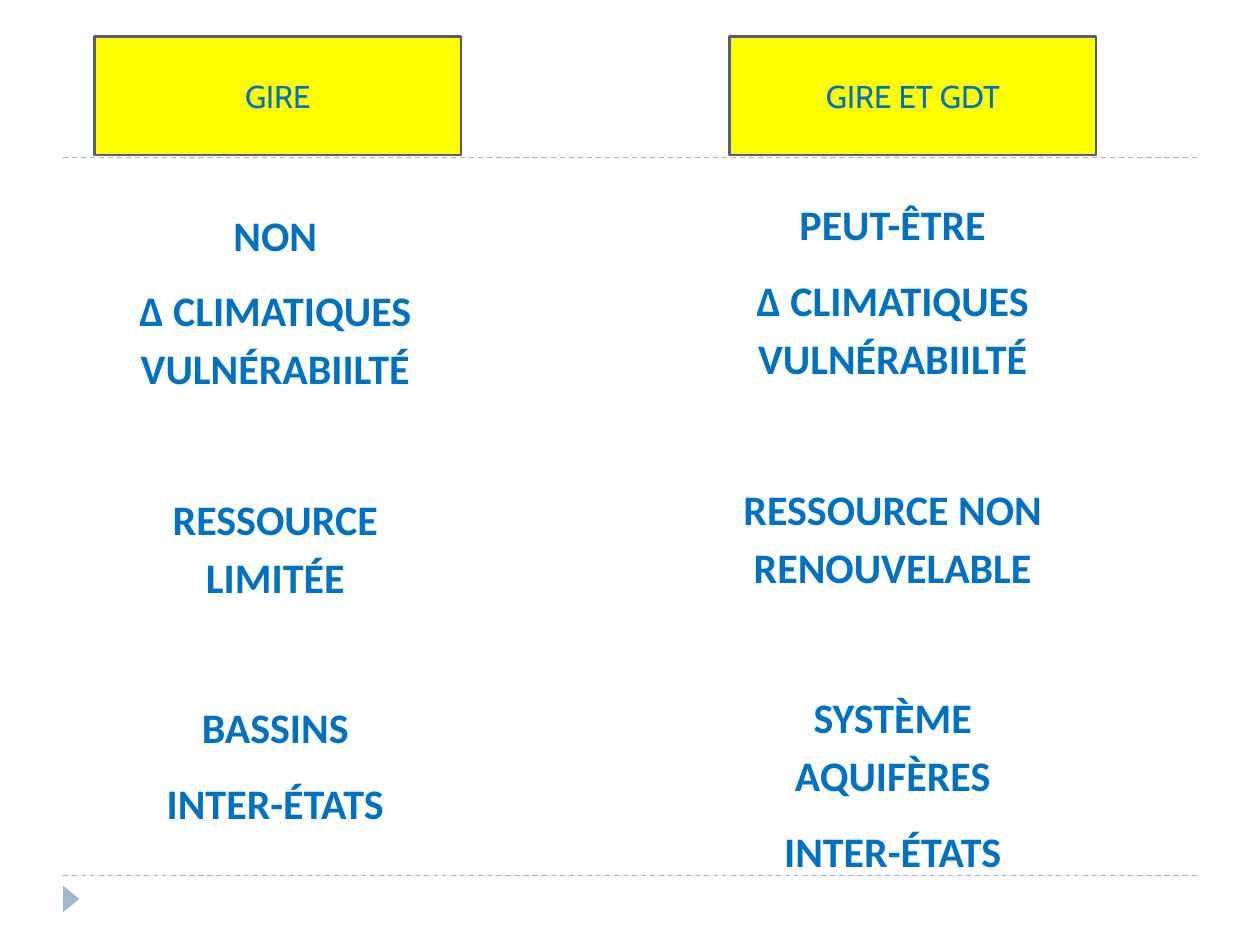
import pptx
import pptx.dml.color
import pptx.enum.dml
import pptx.enum.shapes
import pptx.enum.text
import pptx.oxml.ns
import pptx.util
from lxml import etree

Inches = pptx.util.Inches
Pt = pptx.util.Pt
CENTER = pptx.enum.text.PP_ALIGN.CENTER
SHAPES = pptx.enum.shapes.MSO_SHAPE

BLUE = "0070C0"
YELLOW = "FFFF00"
SLATE = "545C79"
PALE_BLUE = "9FB8CD"

HEADING_FONT = {"name": "Cabin", "size": Pt(18), "bold": False}
TOPIC_FONT = {"name": "Calibri", "size": Pt(24), "bold": True}
TOPIC_PARAGRAPH = {"alignment": CENTER, "line_spacing": 1.15}
TOPIC_FRAME = {
    "word_wrap": True,
    "auto_size": pptx.enum.text.MSO_AUTO_SIZE.SHAPE_TO_FIT_TEXT,
}
LINE_GAP = Pt(10)
TOPIC_GAP = Pt(53)

COLUMNS = [
    {
        "heading": "GIRE",
        "heading_box": (0.75, 0.29, 2.91, 0.94),
        "topics_box": (0.73, 1.55, 2.91, 5.12),
        "topics": [
            ["NON", "Δ CLIMATIQUES VULNÉRABIILTÉ"],
            ["RESSOURCE LIMITÉE"],
            ["BASSINS", "INTER-ÉTATS"],
        ],
    },
    {
        "heading": "GIRE ET GDT",
        "heading_box": (5.79, 0.29, 2.91, 0.94),
        "topics_box": (5.63, 1.47, 2.91, 5.59),
        "topics": [
            ["PEUT-ÊTRE", "Δ CLIMATIQUES VULNÉRABIILTÉ"],
            ["RESSOURCE NON RENOUVELABLE"],
            ["SYSTÈME AQUIFÈRES", "INTER-ÉTATS"],
        ],
    },
]


def rgb(value):
    return pptx.dml.color.RGBColor.from_string(value)


def apply_format(target, values):
    for key, value in values.items():
        setattr(target, key, value)


def write(paragraph, text, font_format):
    run = paragraph.add_run()
    run.text = text
    apply_format(run.font, font_format)
    run.font.color.rgb = rgb(BLUE)


def add_filled(slide, kind, box, fill):
    filled = slide.shapes.add_shape(kind, *map(Inches, box))
    filled.shadow.inherit = False
    filled.fill.solid()
    filled.fill.fore_color.rgb = rgb(fill)
    return filled


def add_rule(slide, left, top, width):
    rule = slide.shapes.add_connector(
        pptx.enum.shapes.MSO_CONNECTOR.STRAIGHT,
        Inches(left), Inches(top), Inches(left + width), Inches(top),
    )
    rule.line.color.rgb = rgb(PALE_BLUE)
    apply_format(rule.line, {
        "width": Pt(0.75),
        "dash_style": pptx.enum.dml.MSO_LINE.DASH,
    })
    etree.SubElement(rule._element.spPr, pptx.oxml.ns.qn("a:effectLst"))


def add_page_marker(slide, box):
    marker = add_filled(slide, SHAPES.ISOSCELES_TRIANGLE, box, PALE_BLUE)
    marker.line.fill.background()
    marker.rotation = 90


def add_heading(slide, box, text):
    heading = add_filled(slide, SHAPES.RECTANGLE, box, YELLOW)
    heading.line.color.rgb = rgb(SLATE)
    heading.line.width = Pt(1.5)
    heading.text_frame.vertical_anchor = pptx.enum.text.MSO_ANCHOR.MIDDLE
    paragraph = heading.text_frame.paragraphs[0]
    paragraph.alignment = CENTER
    write(paragraph, text, HEADING_FONT)


def add_topics(slide, box, topics):
    frame = slide.shapes.add_textbox(*map(Inches, box)).text_frame
    apply_format(frame, TOPIC_FRAME)
    paragraph = frame.paragraphs[0]
    for topic in topics:
        for text in topic:
            if paragraph.runs:
                paragraph = frame.add_paragraph()
            apply_format(paragraph, TOPIC_PARAGRAPH)
            paragraph.space_after = LINE_GAP
            write(paragraph, text, TOPIC_FONT)
        if topic is not topics[-1]:
            paragraph.space_after = TOPIC_GAP


def main():
    deck = pptx.Presentation()
    deck.slide_width, deck.slide_height = Inches(10), Inches(7.5)
    slide = deck.slides.add_slide(deck.slide_layouts[6])
    for top in (6.95, 1.25):
        add_rule(slide, 0.5, top, 9)
    add_page_marker(slide, (0.46, 7.07, 0.21, 0.13))
    for column in COLUMNS:
        add_heading(slide, column["heading_box"], column["heading"])
        add_topics(slide, column["topics_box"], column["topics"])
    deck.save("out.pptx")


if __name__ == "__main__":
    main()
